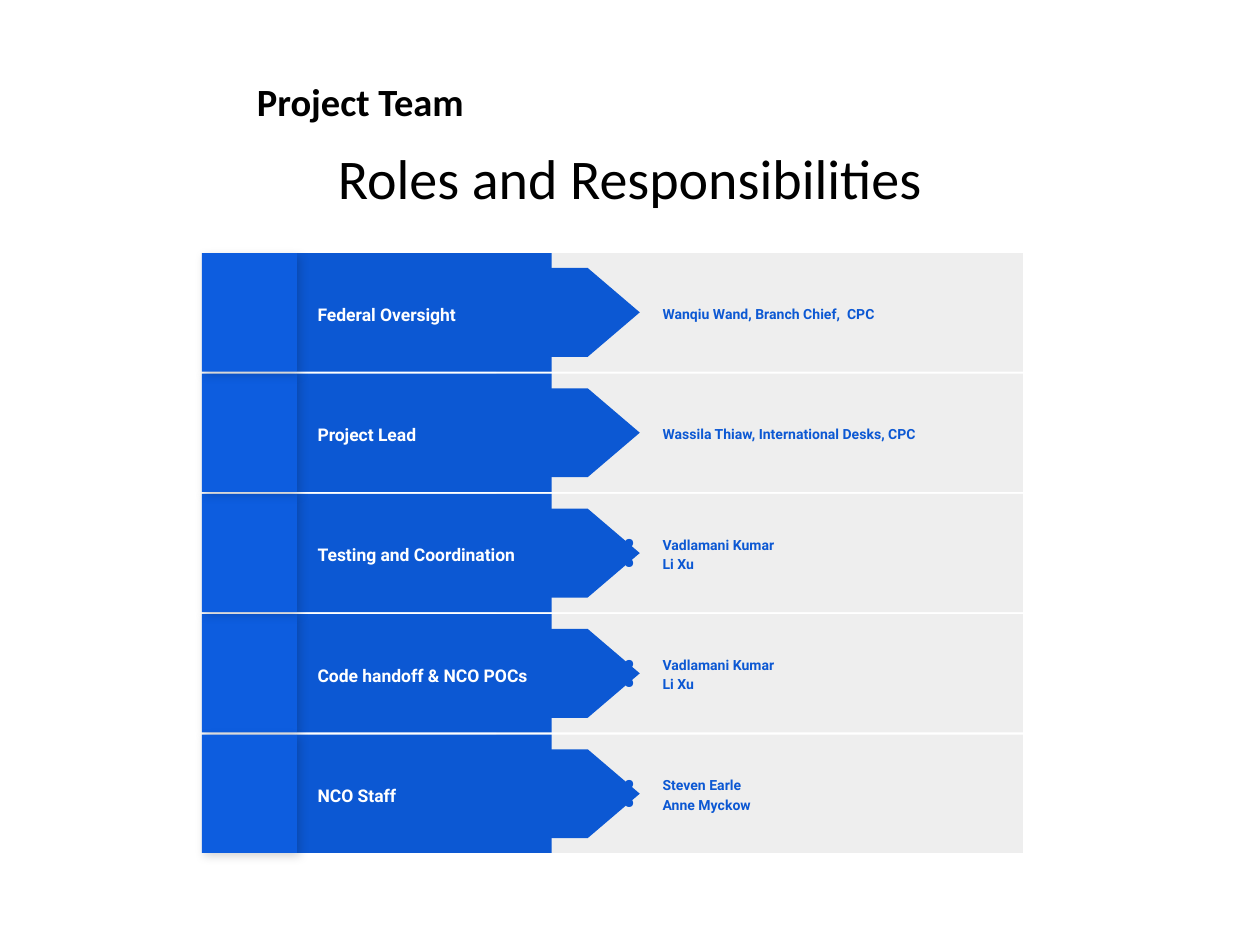
from dataclasses import dataclass

import pptx
import pptx.dml.color
import pptx.enum.shapes
import pptx.enum.text
import pptx.oxml
import pptx.oxml.ns
import pptx.util

Pt = pptx.util.Pt
RGBColor = pptx.dml.color.RGBColor
SHAPE = pptx.enum.shapes.MSO_SHAPE
ALIGN = pptx.enum.text.PP_ALIGN
ANCHOR = pptx.enum.text.MSO_ANCHOR

BLACK = RGBColor(0x00, 0x00, 0x00)
WHITE = RGBColor(0xFF, 0xFF, 0xFF)
BLUE = RGBColor(0x0C, 0x58, 0xD3)
ACCENT = RGBColor(0x0D, 0x5D, 0xDF)
GREY = RGBColor(0xEE, 0xEE, 0xEE)

ROW_TOP, ROW_PITCH, ROW_H = 144.7, 68.76, 67.6
ACCENT_X, LABEL_X, PANEL_X = 115.4, 169.7, 283.7
LABEL_W, PANEL_W = 145.6, 300.9
ARROW_MID, ARROW_LENGTH, ARROW_H = 291.2, 148.8, 50.8
INSET = 7.2


@dataclass
class Role:
    row: int
    title: str
    people: list[str]


# Listed from back to front
ROLES = [
    Role(3, "Code handoff & NCO POCs", ["Vadlamani Kumar", "Li Xu"]),
    Role(2, "Testing and Coordination", ["Vadlamani Kumar", "Li Xu"]),
    Role(1, "Project Lead", ["Wassila Thiaw, International Desks, CPC"]),
    Role(0, "Federal Oversight", ["Wanqiu Wand, Branch Chief,  CPC"]),
    Role(4, "NCO Staff", ["Steven Earle", "Anne Myckow"]),
]


def add_bullet(p, color: RGBColor) -> None:
    pPr = p._p.get_or_add_pPr()
    pPr.set("marL", str(Pt(36)))
    pPr.set("indent", str(Pt(-22.3)))
    ns = pptx.oxml.ns.nsdecls("a")
    for xml in (
        f'<a:buClr {ns}><a:srgbClr val="{color}"/></a:buClr>',
        f'<a:buChar {ns} char="●"/>',
    ):
        pPr.append(pptx.oxml.parse_xml(xml))


def add_shadow(sp) -> None:
    """Give the shape a soft shadow towards the lower right."""
    effects = sp._element.spPr.find(pptx.oxml.ns.qn("a:effectLst"))
    effects.append(pptx.oxml.parse_xml(
        f'<a:outerShdw {pptx.oxml.ns.nsdecls("a")} blurRad="{Pt(5.6)}" '
        f'dist="{Pt(2.2)}" dir="2700000" algn="tl" rotWithShape="0">'
        '<a:srgbClr val="000000"><a:alpha val="17000"/></a:srgbClr></a:outerShdw>'
    ))


def add_text(shapes, lines: list[str], x: float, y: float, w: float, h: float, *,
             size: float, color: RGBColor, font: str = "Roboto", bold: bool = True,
             anchor=ANCHOR.MIDDLE, align=ALIGN.LEFT, spacing: float = 1.15,
             before: float = 0, bullets: bool = False):
    sp = shapes.add_textbox(Pt(x), Pt(y), Pt(w), Pt(h))
    tf = sp.text_frame
    tf.word_wrap = True
    tf.vertical_anchor = anchor
    tf.margin_left = tf.margin_right = tf.margin_top = tf.margin_bottom = Pt(INSET)
    for i, line in enumerate(lines):
        p = tf.add_paragraph() if i else tf.paragraphs[0]
        p.alignment = align
        p.line_spacing = spacing
        p.space_before = Pt(before)
        if bullets:
            add_bullet(p, color)
        r = p.add_run()
        r.text = line
        r.font.name = font
        r.font.size = Pt(size)
        r.font.bold = bold
        r.font.color.rgb = color
    return sp


def add_block(shapes, kind, x: float, y: float, w: float, h: float, fill: RGBColor):
    sp = shapes.add_shape(kind, Pt(x), Pt(y), Pt(w), Pt(h))
    sp.shadow.inherit = False
    sp.fill.solid()
    sp.fill.fore_color.rgb = fill
    sp.line.fill.background()
    return sp


def add_role(s, role: Role) -> None:
    shapes = s.shapes.add_group_shape().shapes
    y = ROW_TOP + role.row * ROW_PITCH
    add_block(shapes, SHAPE.RECTANGLE, PANEL_X, y, PANEL_W, ROW_H, GREY)
    add_block(shapes, SHAPE.RECTANGLE, LABEL_X, y, LABEL_W, ROW_H, BLUE)
    arrow = add_block(shapes, SHAPE.FLOWCHART_OFFPAGE_CONNECTOR,
                      ARROW_MID - ARROW_H / 2, y + (ROW_H - ARROW_LENGTH) / 2,
                      ARROW_H, ARROW_LENGTH, BLUE)
    arrow.rotation = 270
    add_text(shapes, [role.title], 174.4, y + 8, 152.6, 51.8, size=10, color=WHITE)
    accent = add_block(shapes, SHAPE.RECTANGLE, ACCENT_X, y,
                       LABEL_X - ACCENT_X, ROW_H, ACCENT)
    add_shadow(accent)
    add_text(shapes, role.people, 335.5, y, 234, ROW_H, size=8, color=BLUE, bullets=True)


def main() -> None:
    prs = pptx.Presentation()
    prs.slide_width, prs.slide_height = Pt(720), Pt(540)
    s = prs.slides.add_slide(prs.slide_layouts[6])
    add_text(s.shapes, ["Project Team"], 139.7, 37.4, 538.6, 41, size=22, color=BLACK,
             font="Calibri", anchor=ANCHOR.TOP, spacing=1)
    add_text(s.shapes, ["Roles and Responsibilities"], 72, 74.9, 576, 54.7, size=32,
             color=BLACK, font="Calibri", bold=False, anchor=ANCHOR.TOP,
             align=ALIGN.CENTER, spacing=1, before=6.4)
    for role in ROLES:
        add_role(s, role)
    prs.save("out.pptx")


if __name__ == "__main__":
    main()
